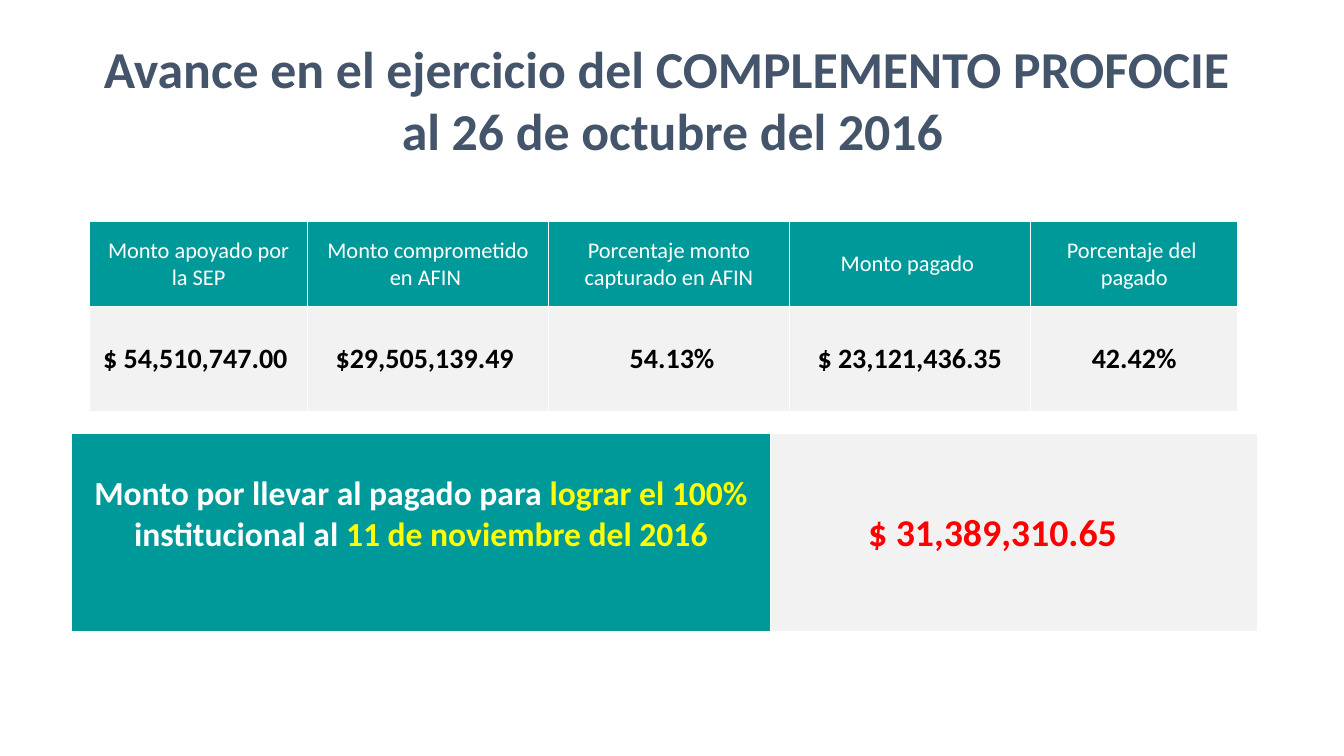
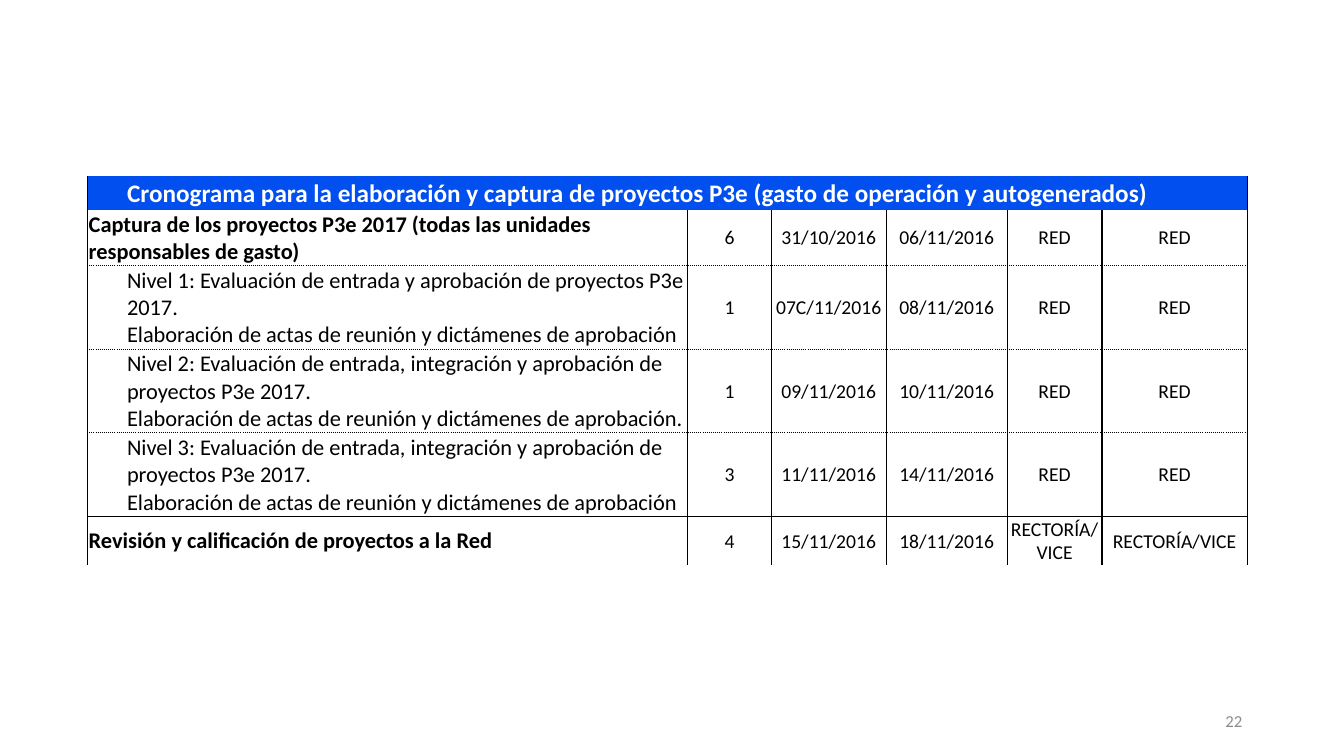
from lxml.etree import SubElement
from pptx import Presentation
from pptx.dml.color import RGBColor
from pptx.enum.text import MSO_ANCHOR as Anchor, MSO_AUTO_SIZE as AutoSize, PP_ALIGN as Align
from pptx.oxml.ns import qn
from pptx.util import Inches, Pt

FONT = "Calibri"
TEAL, BLUE, PALE = "009999", "004FEE", "F2F2F2"
WHITE, BLACK, YELLOW, RED = "FFFFFF", "000000", "FFFF00", "FF0000"
SLATE, GREY = "44546A", "8C8C8C"

HEADER_MARGINS = (0.13, 0.04, 0.13, 0.04)
TIGHT_MARGINS = (0.01, 0.01, 0.01, 0)
INDENTED_MARGINS = (0.39, 0.01, 0.01, 0)

WHITE_GRID = dict.fromkeys("LRTB", (WHITE, 1, "solid"))
SIDES = dict.fromkeys("LR", (BLACK, 1, "solid"))
DOTTED = (BLACK, 0.5, "sysDot")
THIN = (BLACK, 0.5, "solid")

SUMMARY = [
    ("Monto apoyado por la SEP", "$ 54,510,747.00 "),
    ("Monto comprometido en AFIN ", "$29,505,139.49 "),
    ("Porcentaje monto capturado en AFIN", " 54.13%"),
    ("Monto pagado ", "$ 23,121,436.35"),
    ("Porcentaje del \npagado", "42.42%"),
]

SCHEDULE_TITLE = ("Cronograma para la elaboración y captura de proyectos P3e "
                  "(gasto de operación y autogenerados)")
SCHEDULE = [
    ("Captura de los proyectos P3e 2017 (todas las unidades responsables de gasto)",
     "6", "31/10/2016", "06/11/2016", "RED", "RED"),
    ("Nivel 1: Evaluación de entrada y aprobación de proyectos P3e 2017. \n"
     "Elaboración de actas de reunión y dictámenes de aprobación",
     "1", "07C/11/2016", "08/11/2016", "RED", "RED"),
    ("Nivel 2: Evaluación de entrada, integración y aprobación de proyectos P3e 2017. \n"
     "Elaboración de actas de reunión y dictámenes de aprobación.",
     "1", "09/11/2016", "10/11/2016", "RED", "RED"),
    ("Nivel 3: Evaluación de entrada, integración y aprobación de proyectos P3e 2017. \n"
     "Elaboración de actas de reunión y dictámenes de aprobación",
     "3", "11/11/2016", "14/11/2016", "RED", "RED"),
    ("Revisión y calificación de proyectos a la Red",
     "4", "15/11/2016", "18/11/2016", "RECTORÍA/VICE", "RECTORÍA/VICE"),
]
SCHEDULE_EDGES = [None, None, DOTTED, DOTTED, DOTTED, THIN, None]


def rgb(value):
    return RGBColor.from_string(value)


def write_text(holder, text, size=16, color=BLACK, bold=False, align=Align.CENTER,
               anchor=Anchor.MIDDLE, margins=TIGHT_MARGINS):
    holder.vertical_anchor = anchor
    for side, margin in zip(("left", "top", "right", "bottom"), margins):
        setattr(holder, f"margin_{side}", Inches(margin))
    frame = getattr(holder, "text_frame", holder)
    lines = [[(line, color)] for line in text.split("\n")] if isinstance(text, str) else [text]
    for index, line in enumerate(lines):
        para = frame.add_paragraph() if index else frame.paragraphs[0]
        para.alignment = align
        for words, tint in line:
            span = para.add_run()
            span.text = words
            span.font.name = FONT
            span.font.size = Pt(size)
            span.font.bold = bold
            span.font.color.rgb = rgb(tint)


def draw_borders(cell, borders):
    properties = cell._tc.get_or_add_tcPr()
    for side in "LRTB":
        border = borders.get(side)
        line = SubElement(properties, qn(f"a:ln{side}"))
        if border is None:
            SubElement(line, qn("a:noFill"))
            continue
        color, width, dash = border
        line.set("w", str(Pt(width)))
        fill = SubElement(line, qn("a:solidFill"))
        SubElement(fill, qn("a:srgbClr")).set("val", color)
        SubElement(line, qn("a:prstDash")).set("val", dash)


def style_cell(cell, fill, borders):
    draw_borders(cell, borders)
    cell.fill.solid()
    cell.fill.fore_color.rgb = rgb(fill)


def add_grid(page, left, top, widths, heights):
    frame = page.shapes.add_table(len(heights), len(widths), Inches(left), Inches(top),
                                  Inches(sum(widths)), Inches(sum(heights)))
    table = frame.table
    table.first_row = table.horz_banding = False
    for column, width in zip(table.columns, widths):
        column.width = Inches(width)
    for row, height in zip(table.rows, heights):
        row.height = Inches(height)
    return table


def place(shape, left, top, width, height):
    shape.left, shape.top = Inches(left), Inches(top)
    shape.width, shape.height = Inches(width), Inches(height)


def add_title(page, text, left, top, width, height):
    title = page.shapes.title
    place(title, left, top, width, height)
    frame = title.text_frame
    frame.word_wrap = True
    frame.auto_size = AutoSize.NONE
    write_text(frame, text, size=37, color=SLATE, bold=True, anchor=Anchor.TOP,
               margins=(0.13, 0.07, 0.13, 0.07))


def add_summary(page, left, top):
    table = add_grid(page, left, top, [2.16, 2.39, 2.39, 2.39, 2.06], [0.84, 1.04])
    for column, (heading, amount) in enumerate(SUMMARY):
        header, value = table.cell(0, column), table.cell(1, column)
        style_cell(header, TEAL, WHITE_GRID)
        write_text(header, heading, color=WHITE, margins=HEADER_MARGINS)
        style_cell(value, PALE, WHITE_GRID)
        write_text(value, amount, size=20, bold=True)


def add_goal(page, left, top):
    table = add_grid(page, left, top, [6.93, 4.83], [1.97])
    goal, amount = table.cell(0, 0), table.cell(0, 1)
    style_cell(goal, TEAL, WHITE_GRID)
    write_text(goal, [("Monto por llevar al pagado para ", WHITE), ("lograr el 100% ", YELLOW),
                      ("institucional al ", WHITE), ("11 de noviembre del 2016", YELLOW)],
               size=24, bold=True, anchor=Anchor.TOP, margins=(0.13, 0.4, 0.13, 0.05))
    style_cell(amount, PALE, WHITE_GRID)
    write_text(amount, "$ 31,389,310.65", size=27, color=RED, bold=True,
               margins=(0.01, 0.01, 0.43, 0))


def add_schedule(page, left, top):
    table = add_grid(page, left, top, [5.95, 0.83, 1.14, 1.2, 0.94, 1.44],
                     [0.33, 0.55, 0.83, 0.83, 0.83, 0.48])
    heading = table.cell(0, 0)
    heading.merge(table.cell(0, 5))
    style_cell(heading, BLUE, SIDES)
    write_text(heading, SCHEDULE_TITLE, size=18, color=WHITE, bold=True,
               align=Align.LEFT, margins=INDENTED_MARGINS)
    for row, entries in enumerate(SCHEDULE, start=1):
        borders = SIDES | {"T": SCHEDULE_EDGES[row], "B": SCHEDULE_EDGES[row + 1]}
        is_level = entries[0].startswith("Nivel")
        for column, entry in enumerate(entries):
            cell = table.cell(row, column)
            style_cell(cell, WHITE, borders)
            if column:
                write_text(cell, entry, size=14)
            else:
                write_text(cell, entry, bold=not is_level, align=Align.LEFT,
                           margins=INDENTED_MARGINS if is_level else TIGHT_MARGINS)


def add_page_number(page, number, left, top, width, height):
    box = page.shapes.add_textbox(Inches(left), Inches(top), Inches(width), Inches(height))
    box.text_frame.word_wrap = True
    write_text(box.text_frame, number, size=12, color=GREY, align=Align.RIGHT,
               margins=(0.1, 0.05, 0.1, 0.05))


def build_progress(deck):
    page = deck.slides.add_slide(deck.slide_layouts[5])
    add_title(page, "Avance en el ejercicio del COMPLEMENTO PROFOCIE \nal 26 de octubre del 2016",
              0.58, 0.29, 12.18, 1.39)
    add_summary(page, 0.89, 2.2)
    add_goal(page, 0.71, 4.3)


def build_schedule(deck):
    page = deck.slides.add_slide(deck.slide_layouts[6])
    add_schedule(page, 0.87, 1.75)
    add_page_number(page, "22", 9.42, 6.95, 3, 0.4)


def main():
    deck = Presentation()
    deck.slide_width, deck.slide_height = Inches(13.33), Inches(7.5)
    build_progress(deck)
    build_schedule(deck)
    deck.save("out.pptx")


if __name__ == "__main__":
    main()
